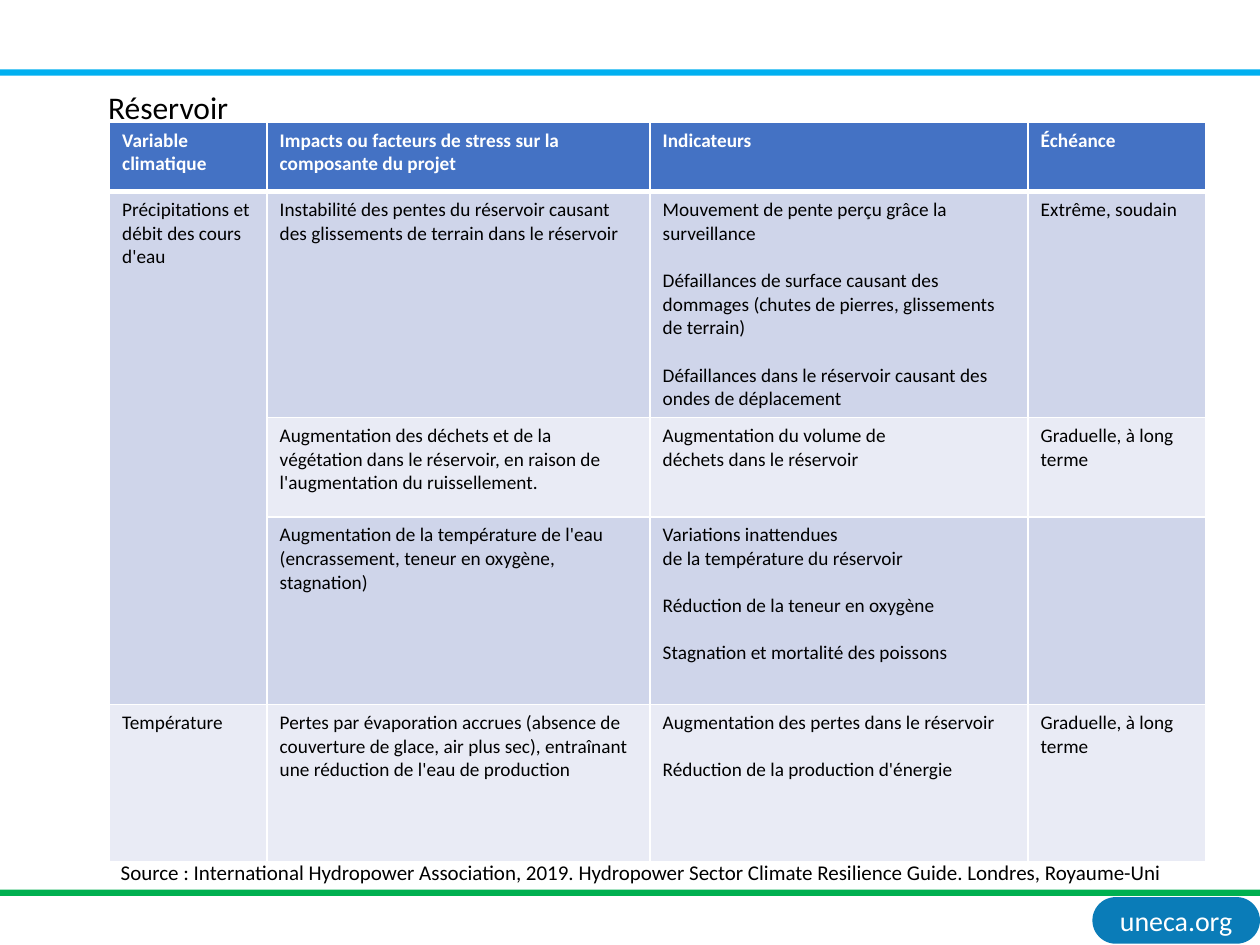
from dataclasses import dataclass

from lxml.etree import SubElement
from pptx import Presentation
from pptx.dml.color import RGBColor as RGB
from pptx.enum.shapes import MSO_SHAPE as Shape
from pptx.enum.text import MSO_ANCHOR as Anchor, PP_ALIGN as Align
from pptx.oxml.ns import qn
from pptx.util import Inches, Pt


@dataclass(frozen=True)
class Theme:
    font: str = "Calibri"
    white: str = "FFFFFF"
    black: str = "000000"
    sky: str = "00B0F0"
    green: str = "00B050"
    badge: str = "0A7CB8"
    header: str = "4472C4"
    dark_band: str = "CFD5EA"
    light_band: str = "E9EBF5"
    title_size: float = 18
    badge_size: float = 16
    source_size: float = 12
    table_size: float = 11
    paragraph_gap: float = 13.4
    grid_line: float = 1
    header_line: float = 3


@dataclass(frozen=True)
class Box:
    left: float
    top: float
    width: float
    height: float

    def emu(self) -> tuple:
        return tuple(map(Inches, (self.left, self.top, self.width, self.height)))


@dataclass(frozen=True)
class Row:
    height: float
    fill: str
    cells: tuple


T = Theme()
COLUMNS = (1.25, 3.04, 3.0, 1.41)
ROWS = (
    Row(0.55, T.header, (
        "Variable climatique",
        "Impacts ou facteurs de stress sur la composante du projet",
        "Indicateurs",
        "Échéance")),
    Row(1.75, T.dark_band, (
        "Précipitations et débit des cours d'eau",
        "Instabilité des pentes du réservoir causant\n"
        "des glissements de terrain dans le réservoir",
        "Mouvement de pente perçu grâce la surveillance\n\n"
        "Défaillances de surface causant des dommages "
        "(chutes de pierres, glissements de terrain)\n\n"
        "Défaillances dans le réservoir causant des ondes de déplacement",
        "Extrême, soudain")),
    Row(0.79, T.light_band, (
        "",
        "Augmentation des déchets et de la végétation dans le réservoir, "
        "en raison de l'augmentation du ruissellement.",
        "Augmentation du volume de\ndéchets dans le réservoir",
        "Graduelle, à long terme")),
    Row(1.49, T.dark_band, (
        "",
        "Augmentation de la température de l'eau "
        "(encrassement, teneur en oxygène,\nstagnation)",
        "Variations inattendues\nde la température du réservoir\n\n"
        "Réduction de la teneur en oxygène\n\n"
        "Stagnation et mortalité des poissons",
        "")),
    Row(1.25, T.light_band, (
        "Température",
        "Pertes par évaporation accrues (absence de couverture de glace, "
        "air plus sec), entraînant une réduction de l'eau de production",
        "Augmentation des pertes dans le réservoir\n\n"
        "Réduction de la production d'énergie",
        "Graduelle, à long terme")),
)


def write(tf, text: str, *, size: float, color: str = T.black,
          bold: bool = False, align=Align.LEFT, gap: float = 0) -> None:
    """Write one paragraph a line; a double line break adds the gap."""
    p = tf.paragraphs[0]
    for i, group in enumerate(text.split("\n\n")):
        for j, line in enumerate(group.split("\n")):
            if i or j:
                p = tf.add_paragraph()
            p.alignment = align
            p.space_before = Pt(gap if i and not j else 0)
            p.font.size = Pt(size)
            if line:
                r = p.add_run()
                r.text = line
                r.font.name = T.font
                r.font.size = Pt(size)
                r.font.bold = bold
                r.font.color.rgb = RGB.from_string(color)


def add_block(slide, kind, box: Box, color: str):
    s = slide.shapes.add_shape(kind, *box.emu())
    s.shadow.inherit = False
    s.fill.solid()
    s.fill.fore_color.rgb = RGB.from_string(color)
    s.line.fill.background()
    return s


def add_label(slide, box: Box, text: str, *, size: float, wrap: bool) -> None:
    tf = slide.shapes.add_textbox(*box.emu()).text_frame
    tf.word_wrap = wrap
    write(tf, text, size=size)


def set_borders(cell, *, top: float, bottom: float) -> None:
    tc_pr = cell._tc.get_or_add_tcPr()
    widths = {"lnL": T.grid_line, "lnR": T.grid_line, "lnT": top, "lnB": bottom}
    for tag, width in widths.items():
        ln = SubElement(tc_pr, qn(f"a:{tag}"), w=str(Pt(width)))
        SubElement(SubElement(ln, qn("a:solidFill")), qn("a:srgbClr"), val=T.white)


def add_impact_table(slide, left: float, top: float) -> None:
    box = Box(left, top, sum(COLUMNS), sum(row.height for row in ROWS))
    table = slide.shapes.add_table(len(ROWS), len(COLUMNS), *box.emu()).table
    table.horz_banding = False
    for column, width in zip(table.columns, COLUMNS):
        column.width = Inches(width)
    for i, row in enumerate(ROWS):
        table.rows[i].height = Inches(row.height)
        is_header = i == 0
        for j, text in enumerate(row.cells):
            cell = table.cell(i, j)
            set_borders(cell,
                        top=T.header_line if i == 1 else T.grid_line,
                        bottom=T.header_line if is_header else T.grid_line)
            cell.fill.solid()
            cell.fill.fore_color.rgb = RGB.from_string(row.fill)
            write(cell.text_frame, text, size=T.table_size, bold=is_header,
                  color=T.white if is_header else T.black, gap=T.paragraph_gap)
    table.cell(1, 0).merge(table.cell(3, 0))


def add_badge(slide, box: Box, text: str) -> None:
    s = add_block(slide, Shape.ROUNDED_RECTANGLE, box, T.badge)
    s.adjustments[0] = 0.5
    tf = s.text_frame
    tf.margin_left = tf.margin_right = tf.margin_top = tf.margin_bottom = Inches(0.05)
    tf.vertical_anchor = Anchor.MIDDLE
    write(tf, text, size=T.badge_size, color=T.white, align=Align.CENTER)


def main() -> None:
    prs = Presentation()
    prs.slide_width, prs.slide_height = Inches(10), Inches(7.5)
    slide = prs.slides.add_slide(prs.slide_layouts[6])
    add_badge(slide, Box(8.67, 7.12, 1.33, 0.37), "uneca.org")
    for top, color in ((0.55, T.sky), (7.06, T.green)):
        add_block(slide, Shape.RECTANGLE, Box(0, top, 10, 0.05), color)
    add_impact_table(slide, 0.87, 0.97)
    add_label(slide, Box(0.76, 0.65, 1.17, 0.4), "Réservoir",
              size=T.title_size, wrap=False)
    add_label(slide, Box(0.86, 6.77, 9.3, 0.3),
              "Source : International Hydropower Association, 2019. Hydropower "
              "Sector Climate Resilience Guide. Londres, Royaume-Uni",
              size=T.source_size, wrap=True)
    prs.save("out.pptx")


if __name__ == "__main__":
    main()
